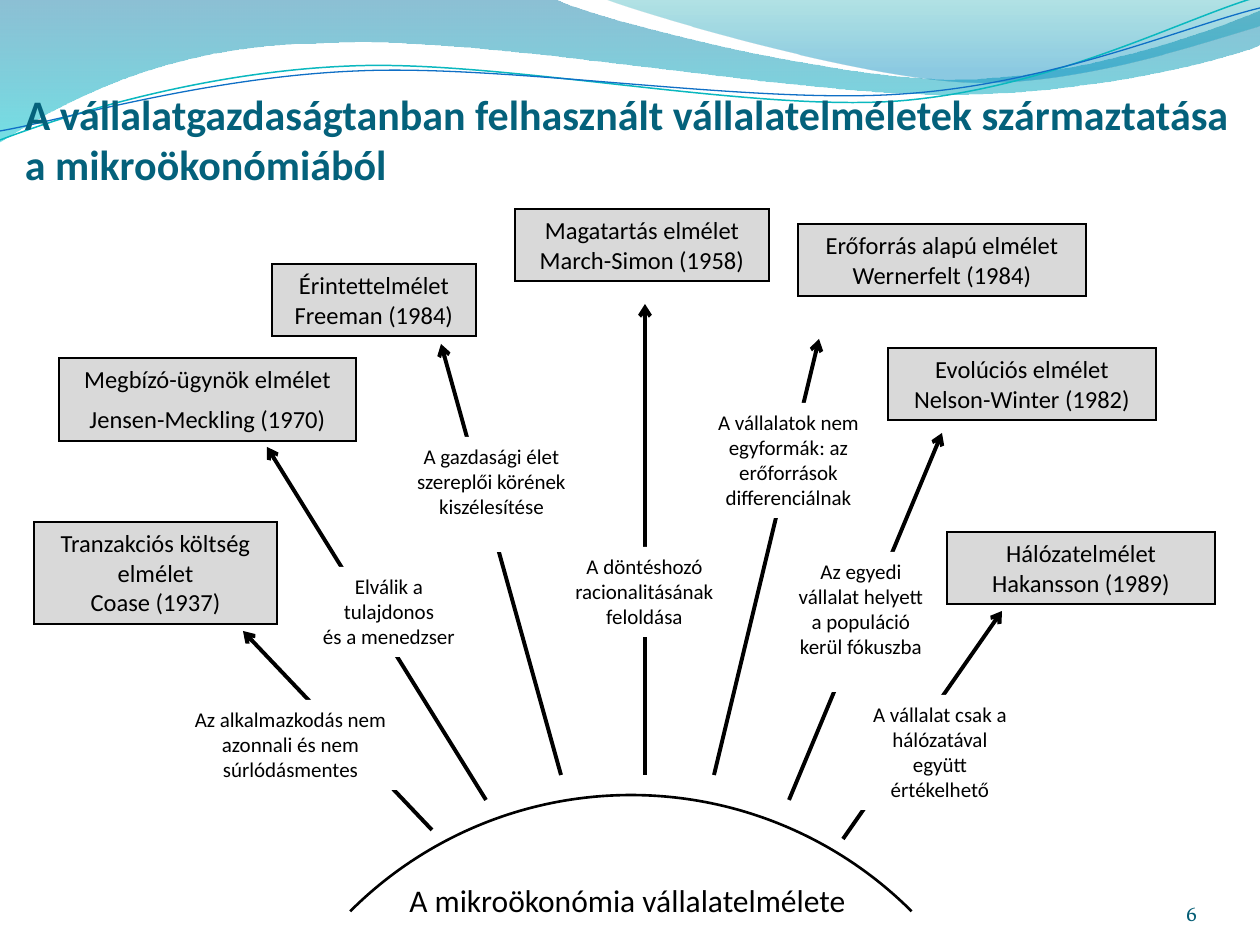
from lxml import etree
from pptx import Presentation
from pptx.dml.color import RGBColor
from pptx.enum.shapes import MSO_CONNECTOR, MSO_SHAPE
from pptx.enum.text import MSO_ANCHOR, MSO_AUTO_SIZE, PP_ALIGN
from pptx.oxml.ns import qn
from pptx.util import Pt

STRAIGHT = MSO_CONNECTOR.STRAIGHT
RECT, ARC = MSO_SHAPE.RECTANGLE, MSO_SHAPE.ARC
TOP, BOTTOM = MSO_ANCHOR.TOP, MSO_ANCHOR.BOTTOM
LEFT, CENTER, RIGHT = PP_ALIGN.LEFT, PP_ALIGN.CENTER, PP_ALIGN.RIGHT
GROW = MSO_AUTO_SIZE.SHAPE_TO_FIT_TEXT
SCALE = 914400 / 126
COLORS = {
    "text": "000000", "box": "D9D9D9", "label": "FFFFFF",
    "title": "04617B", "number": "045D75",
    "blue": "0074A1", "cyan": "00C6CF", "teal": "00A1A9", "sky": "008BBF",
    "wave_teal": "0AB8BF", "wave_blue": "0F6FC6",
}
RGB = {name: RGBColor.from_string(value) for name, value in COLORS.items()}

prs = Presentation()
prs.slide_width = round(1260 * SCALE)
prs.slide_height = round(945 * SCALE)
s = prs.slides.add_slide(prs.slide_layouts[6])


def add_curve(start, segments, close):
    builder = s.shapes.build_freeform(*start, scale=SCALE)
    for seg in segments:
        builder.add_line_segments(list(zip(seg[::2], seg[1::2])), close=False)
    if close:
        builder.add_line_segments([], close=True)
    sp = builder.convert_to_shape()
    sp.shadow.inherit = False
    lines = list(sp.element.iter(qn("a:lnTo")))
    for seg in segments:
        points, lines = lines[:len(seg) // 2], lines[len(seg) // 2:]
        if len(points) == 3:
            curve = etree.Element(qn("a:cubicBezTo"))
            points[0].addprevious(curve)
            for point in points:
                curve.append(point[0])
                point.getparent().remove(point)
    return sp


def add_text(sp, lines, size, color, align=CENTER, anchor=TOP, font="Calibri", before=0):
    tf = sp.text_frame
    tf.word_wrap = True
    tf.vertical_anchor = anchor
    tf.text = "\n".join(lines)
    for p in tf.paragraphs:
        p.alignment = align
        if before:
            p.space_before = Pt(before)
        p.font.name = font
        p.font.size = Pt(size)
        p.font.color.rgb = RGB[color]
    return tf


bands = [
    ((0, -1), [(554, -1), (600, 21, 837, 79, 955, 79), (1075, 79, 1207, 33, 1260, 11),
               (1261, 45), (1239, 55, 1096, 96, 940, 94), (784, 94, 481, 35, 324, 43),
               (163, 44, 58, 105, -1, 142), (0, -1)],
     [("blue", 0, 45), ("cyan", 1, 55)]),
    ((604, -1), [(641, 14, 859, 78, 969, 82), (1079, 86, 1211, 40, 1260, 26),
                 (1260, 0), (604, -1)],
     [("teal", 0, 30), ("sky", 0.8, 45)]),
]
for start, segments, stops in bands:
    sp = add_curve(start, segments, True)
    sp.fill.gradient()
    sp.fill.gradient_angle = 270
    for stop, (color, position, opacity) in zip(sp.fill.gradient_stops, stops):
        stop.color.rgb = RGB[color]
        stop.position = position
    for clr, (color, position, opacity) in zip(sp.element.iter(qn("a:srgbClr")), stops):
        etree.SubElement(clr, qn("a:alpha"), val=str(opacity * 1000))
    sp.line.fill.background()

waves = [
    ((0, 140), [(60, 117, 199, 72, 349, 66), (498, 59, 747, 112, 898, 101),
                (1050, 89, 1182, 19, 1257, -3)], "wave_teal", 0.85),
    ((0, 131), [(59, 121, 207, 77, 357, 71), (508, 64, 752, 105, 903, 94),
                (1053, 84, 1186, 26, 1260, 8)], "wave_blue", 0.75),
]
for start, segments, color, width in waves:
    sp = add_curve(start, segments, False)
    sp.fill.background()
    sp.line.color.rgb = RGB[color]
    sp.line.width = Pt(width)

title = "A vállalatgazdaságtanban felhasznált vállalatelméletek származtatása a mikroökonómiából"
sp = s.shapes.add_textbox(*[round(v * SCALE) for v in (25, 97, 1211, 92)])
tf = add_text(sp, [title], 24, "title", LEFT, BOTTOM)
tf.margin_left = tf.margin_right = tf.margin_bottom = 0
tf.paragraphs[0].font.bold = True

arrows = [
    (432, 830, 243, 631), (486, 800, 267, 447), (561, 775, 441, 344),
    (645, 775, 645, 304), (714, 775, 819, 339), (789, 800, 942, 433),
    (843, 839, 1002, 611),
]
for ends in arrows:
    cx = s.shapes.add_connector(STRAIGHT, *[round(v * SCALE) for v in ends])
    cx.line.color.rgb = RGB["text"]
    cx.line.width = Pt(2.25)
    etree.SubElement(cx.element.spPr.find(qn("a:ln")), qn("a:tailEnd"), type="arrow")
    etree.SubElement(cx.element.spPr, qn("a:effectLst"))

theories = [
    (34, 522, 243, 102, ["Tranzakciós költség elmélet", "Coase (1937)"], 0),
    (59, 358, 297, 83, ["Megbízó-ügynök elmélet", "Jensen-Meckling (1970)"], 6),
    (272, 264, 204, 72, ["Érintettelmélet", "Freeman (1984)"], 0),
    (515, 209, 254, 72, ["Magatartás elmélet", "March-Simon (1958)"], 0),
    (798, 224, 288, 72, ["Erőforrás alapú elmélet", "Wernerfelt (1984)"], 0),
    (888, 348, 268, 72, ["Evolúciós elmélet", "Nelson-Winter (1982)"], 0),
    (947, 532, 268, 72, ["Hálózatelmélet", "Hakansson (1989)"], 0),
]
reasons = [
    (179, 700, 223, 90, ["Az alkalmazkodás nem azonnali és nem", "súrlódásmentes"], 0),
    (302, 567, 174, 90, ["Elválik a tulajdonos", "és a menedzser"], 0),
    (402, 437, 179, 115, ["A gazdasági élet", "szereplői körének kiszélesítése"], 0),
    (555, 547, 179, 90, ["A döntéshozó racionalitásának", "feloldása"], 0),
    (694, 403, 189, 115, ["A vállalatok nem egyformák: az erőforrások differenciálnak"], 0),
    (779, 552, 164, 140, ["Az egyedi vállalat helyett a populáció kerül fókuszba"], 0),
    (858, 695, 164, 115, ["A vállalat csak a hálózatával együtt értékelhető"], 0),
]
for items, fill, size in ((theories, "box", 14), (reasons, "label", 12)):
    for x, y, w, h, lines, before in items:
        sp = s.shapes.add_shape(RECT, *[round(v * SCALE) for v in (x, y, w, h)])
        sp.shadow.inherit = False
        sp.fill.solid()
        sp.fill.fore_color.rgb = RGB[fill]
        if fill == "box":
            sp.line.color.rgb = RGB["text"]
            sp.line.width = Pt(0.75)
            etree.SubElement(sp.element.spPr.find(qn("a:ln")), qn("a:miter"), lim="800000")
        else:
            sp.line.fill.background()
        tf = add_text(sp, lines, size, "text", before=before)
        tf.auto_size = GROW

sp = s.shapes.add_textbox(*[round(v * SCALE) for v in (377, 875, 501, 51)])
tf = add_text(sp, ["A mikroökonómia vállalatelmélete"], 18, "text")
tf.auto_size = GROW

arc = s.shapes.add_shape(ARC, *[round(v * SCALE) for v in (234, 795, 794, 794)])
arc.rotation = 315
arc.shadow.inherit = False
arc.fill.background()
arc.line.color.rgb = RGB["text"]
arc.line.width = Pt(1.5)

sp = s.shapes.add_textbox(*[round(v * SCALE) for v in (1092, 876, 105, 50)])
tf = add_text(sp, ["6"], 12, "number", RIGHT, BOTTOM, "Vollkorn")
tf.margin_left = tf.margin_right = tf.margin_top = tf.margin_bottom = 0

prs.save("out.pptx")
